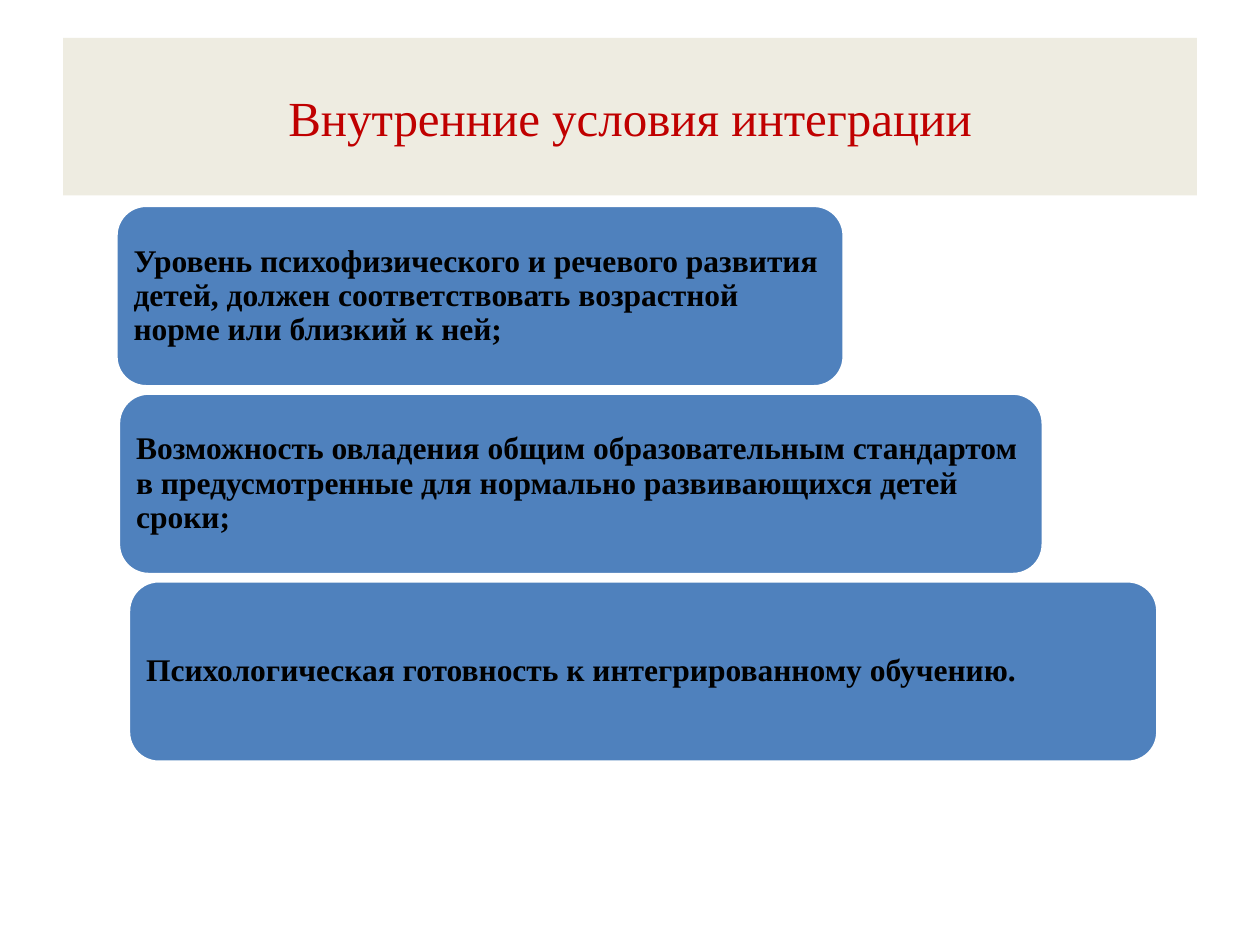
from pptx import Presentation
from pptx.dml.color import RGBColor
from pptx.enum.shapes import MSO_SHAPE
from pptx.enum.text import MSO_ANCHOR, PP_ALIGN
from pptx.util import Inches, Pt

ROUND = MSO_SHAPE.ROUNDED_RECTANGLE
MIDDLE = MSO_ANCHOR.MIDDLE
LEFT, CENTER = PP_ALIGN.LEFT, PP_ALIGN.CENTER
BLUE = RGBColor(0x4F, 0x81, 0xBD)
CREAM = RGBColor(0xEE, 0xEC, 0xE1)
RED = RGBColor(0xC0, 0x00, 0x00)
BLACK = RGBColor(0x00, 0x00, 0x00)
WHITE = RGBColor(0xFF, 0xFF, 0xFF)
FACE = "Times New Roman"

# Content: left edge, width and text of each condition
TITLE = "Внутренние условия интеграции"
ITEMS = [
    (0.92, 5.78, "Уровень психофизического и речевого развития детей, "
                 "должен соответствовать возрастной норме или близкий к ней;"),
    (0.94, 7.34, "Возможность овладения общим образовательным стандартом "
                 "в предусмотренные для нормально развивающихся детей сроки;"),
    (1.02, 8.17, "Психологическая готовность к интегрированному обучению."),
]
TOP, HIGH, STEP = 1.63, 1.44, 1.49

# Formats
HEAD = {"name": FACE, "size": Pt(28), "bold": False}
BODY = {"name": FACE, "size": Pt(18), "bold": True}
FRAME = {
    "word_wrap": True, "vertical_anchor": MIDDLE,
    "margin_left": Inches(0.07), "margin_right": Inches(0.07),
    "margin_top": Inches(0.04), "margin_bottom": Inches(0.04),
}


def apply(target, style):
    for key, value in style.items():
        setattr(target, key, value)


def fill_in(shape, fill, text, style, color, align):
    shape.fill.solid()
    shape.fill.fore_color.rgb = fill
    frame = shape.text_frame
    apply(frame, FRAME)
    para = frame.paragraphs[0]
    para.alignment = align
    run = para.add_run()
    run.text = text
    apply(run.font, style)
    run.font.color.rgb = color
    return para


def main():
    deck = Presentation()
    deck.slide_width, deck.slide_height = Inches(10), Inches(7.5)
    slide = deck.slides.add_slide(deck.slide_layouts[5])

    # Title band
    title = slide.shapes.title
    title.left, title.top = Inches(0.5), Inches(0.3)
    title.width, title.height = Inches(9), Inches(1.25)
    fill_in(title, CREAM, TITLE, HEAD, RED, CENTER)

    # Widening stack of conditions
    for i, (left, wide, text) in enumerate(ITEMS):
        box = slide.shapes.add_shape(
            ROUND, Inches(left), Inches(TOP + i * STEP), Inches(wide), Inches(HIGH))
        box.shadow.inherit = False
        box.line.color.rgb = WHITE
        box.line.width = Pt(2)
        para = fill_in(box, BLUE, text, BODY, BLACK, LEFT)
        para.line_spacing = 0.9

    deck.save("out.pptx")


if __name__ == "__main__":
    main()
